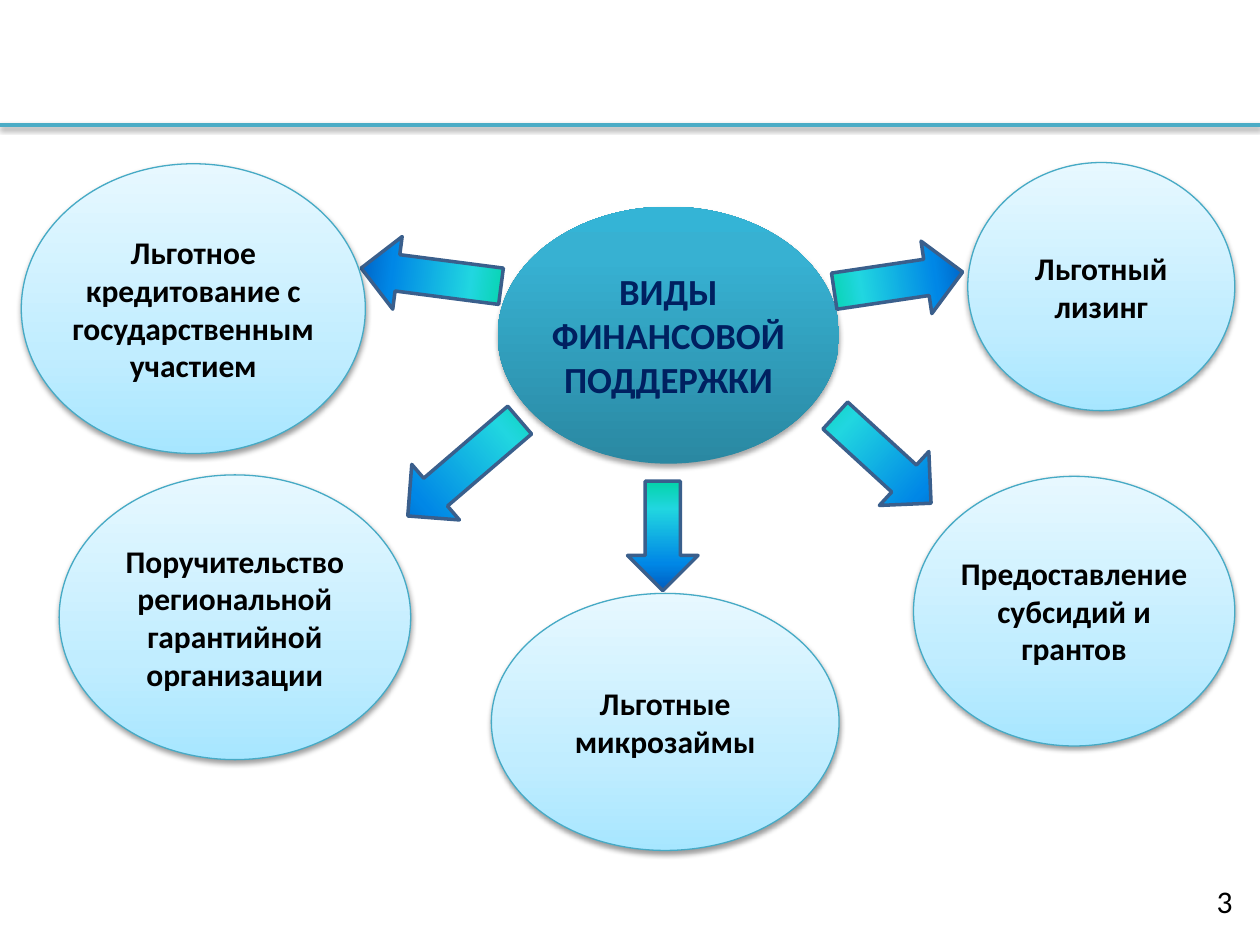
from dataclasses import dataclass

from lxml import etree
from pptx import Presentation
from pptx.dml.color import RGBColor
from pptx.enum.shapes import MSO_CONNECTOR, MSO_SHAPE
from pptx.enum.text import MSO_ANCHOR, PP_ALIGN
from pptx.oxml.ns import qn
from pptx.util import Pt

ELLIPSE = MSO_SHAPE.OVAL
DOWN_ARROW = MSO_SHAPE.DOWN_ARROW
STRAIGHT = MSO_CONNECTOR.STRAIGHT
MIDDLE, TOP = MSO_ANCHOR.MIDDLE, MSO_ANCHOR.TOP
CENTER, RIGHT = PP_ALIGN.CENTER, PP_ALIGN.RIGHT
DEFAULT_INSETS = (7.2, 3.6, 7.2, 3.6)
TIGHT_SIDES = (0, 3.6, 0, 3.6)
NO_INSETS = (0, 0, 0, 0)


@dataclass(frozen=True)
class Gradient:
    stops: tuple[tuple[int, str], ...]
    angle: int


@dataclass(frozen=True)
class Shadow:
    opacity: int
    blur: float
    distance: float


@dataclass(frozen=True)
class Theme:
    font: str = "Calibri"
    hub_size: float = 21
    body_size: float = 18
    text: str = "000000"
    hub_text: str = "002060"
    rule: str = "4BACC6"
    bubble_line: str = "46AAC5"
    arrow_line: str = "3A5F8C"
    bubble_fill: Gradient = Gradient(((0, "A7E6FF"), (35, "C1EDFF"), (100, "E7F8FF")), 90)
    hub_fill: Gradient = Gradient(((0, "2A88A2"), (80, "37B1D2"), (100, "34B4D6")), 90)
    arrow_fill: Gradient = Gradient(
        ((0, "03D4A8"), (25, "21D6E0"), (75, "0087E6"), (100, "005CBF")), 270)
    soft_shadow: Shadow = Shadow(38, 3.1, 1.6)
    hub_shadow: Shadow = Shadow(35, 3.1, 1.8)


THEME = Theme()


@dataclass(frozen=True)
class Box:
    left: float
    top: float
    width: float
    height: float

    def lengths(self) -> tuple:
        return Pt(self.left), Pt(self.top), Pt(self.width), Pt(self.height)


@dataclass(frozen=True)
class Bubble:
    label: str
    box: Box
    insets: tuple = DEFAULT_INSETS


@dataclass(frozen=True)
class Arrow:
    box: Box
    rotation: float = 0


HUB = Bubble("ВИДЫ ФИНАНСОВОЙ ПОДДЕРЖКИ", Box(284.4, 118.1, 195.1, 146.9), NO_INSETS)

SUPPORT_TYPES = (
    Bubble("Льготное кредитование с государственным участием",
           Box(12.2, 93.6, 196.6, 165.6), TIGHT_SIDES),
    Bubble("Поручительство региональной гарантийной организации",
           Box(33.8, 271.4, 200.9, 162.7)),
    Bubble("Льготные микрозаймы", Box(280.8, 339.1, 198.7, 146.9)),
    Bubble("Предоставление субсидий и грантов",
           Box(522, 272.2, 183.6, 154.1), (0, 2.9, 0, 3.6)),
    Bubble("Льготный лизинг", Box(553, 92.9, 152.6, 141.8), TIGHT_SIDES),
)

ARROWS_BEHIND_HUB = (
    Arrow(Box(225.4, 118.1, 41.8, 80.6), 97.4),
    Arrow(Box(358.6, 275, 40.3, 62.6)),
)

ARROWS_IN_FRONT = (
    Arrow(Box(492.5, 123.8, 41.8, 74.2), 261.5),
    Arrow(Box(244.1, 225.4, 41.8, 84.2), 49.4),
    Arrow(Box(483.8, 225.4, 41.8, 74.2), 312.5),
)


def add_color(parent, value: str):
    return etree.SubElement(parent, qn("a:srgbClr"), val=value)


def apply_gradient(shape, gradient: Gradient) -> None:
    shape.fill.gradient()
    shape.fill.gradient_angle = gradient.angle
    stop_list = shape.element.spPr.find(qn("a:gradFill")).find(qn("a:gsLst"))
    for stop in list(stop_list):
        stop_list.remove(stop)
    for position, color in gradient.stops:
        add_color(etree.SubElement(stop_list, qn("a:gs"), pos=str(position * 1000)), color)


def apply_shadow(effects, shadow: Shadow) -> None:
    outer = etree.SubElement(
        effects, qn("a:outerShdw"), blurRad=str(int(Pt(shadow.blur))),
        dist=str(int(Pt(shadow.distance))), dir="5400000", rotWithShape="0")
    etree.SubElement(add_color(outer, "000000"), qn("a:alpha"), val=str(shadow.opacity * 1000))


def apply_line(line, color: str, width: float) -> None:
    line.color.rgb = RGBColor.from_string(color)
    line.width = Pt(width)


def write_text(frame, text: str, *, size: float = THEME.body_size, color: str = THEME.text,
               bold: bool = False, align=CENTER, anchor=MIDDLE,
               insets: tuple = DEFAULT_INSETS) -> None:
    frame.word_wrap = True
    frame.vertical_anchor = anchor
    (frame.margin_left, frame.margin_top,
     frame.margin_right, frame.margin_bottom) = map(Pt, insets)
    paragraph = frame.paragraphs[0]
    paragraph.alignment = align
    run = paragraph.add_run()
    run.text = text
    run.font.name = THEME.font
    run.font.size = Pt(size)
    run.font.bold = bold
    run.font.color.rgb = RGBColor.from_string(color)


def add_gradient_shape(slide, kind, box: Box, gradient: Gradient):
    shape = slide.shapes.add_shape(kind, *box.lengths())
    shape.shadow.inherit = False
    apply_gradient(shape, gradient)
    return shape


def draw_bubble(slide, bubble: Bubble) -> None:
    ellipse = add_gradient_shape(slide, ELLIPSE, bubble.box, THEME.bubble_fill)
    apply_line(ellipse.line, THEME.bubble_line, 0.75)
    apply_shadow(ellipse.element.spPr.find(qn("a:effectLst")), THEME.soft_shadow)
    write_text(ellipse.text_frame, bubble.label, bold=True, insets=bubble.insets)


def draw_hub(slide, hub: Bubble) -> None:
    ellipse = add_gradient_shape(slide, ELLIPSE, hub.box, THEME.hub_fill)
    ellipse.line.fill.background()
    apply_shadow(ellipse.element.spPr.find(qn("a:effectLst")), THEME.hub_shadow)
    write_text(ellipse.text_frame, hub.label, size=THEME.hub_size, color=THEME.hub_text,
               bold=True, insets=hub.insets)


def draw_arrow(slide, arrow: Arrow) -> None:
    shape = add_gradient_shape(slide, DOWN_ARROW, arrow.box, THEME.arrow_fill)
    shape.rotation = arrow.rotation
    apply_line(shape.line, THEME.arrow_line, 2)


def draw_header_rule(slide, width: float, top: float) -> None:
    rule = slide.shapes.add_connector(STRAIGHT, Pt(0), Pt(top), Pt(width), Pt(top))
    apply_line(rule.line, THEME.rule, 2)
    effects = etree.SubElement(rule._element.spPr, qn("a:effectLst"))
    apply_shadow(effects, THEME.soft_shadow)


def main() -> None:
    deck = Presentation()
    deck.slide_width, deck.slide_height = Pt(720), Pt(540)
    slide = deck.slides.add_slide(deck.slide_layouts[6])

    draw_header_rule(slide, 720, 71.3)
    page_number = slide.shapes.add_textbox(*Box(683.3, 500.4, 28.1, 28.8).lengths())
    write_text(page_number.text_frame, "3", align=RIGHT, anchor=TOP)
    for arrow in ARROWS_BEHIND_HUB:
        draw_arrow(slide, arrow)
    draw_hub(slide, HUB)
    for bubble in SUPPORT_TYPES:
        draw_bubble(slide, bubble)
    for arrow in ARROWS_IN_FRONT:
        draw_arrow(slide, arrow)

    deck.save("out.pptx")


if __name__ == "__main__":
    main()
